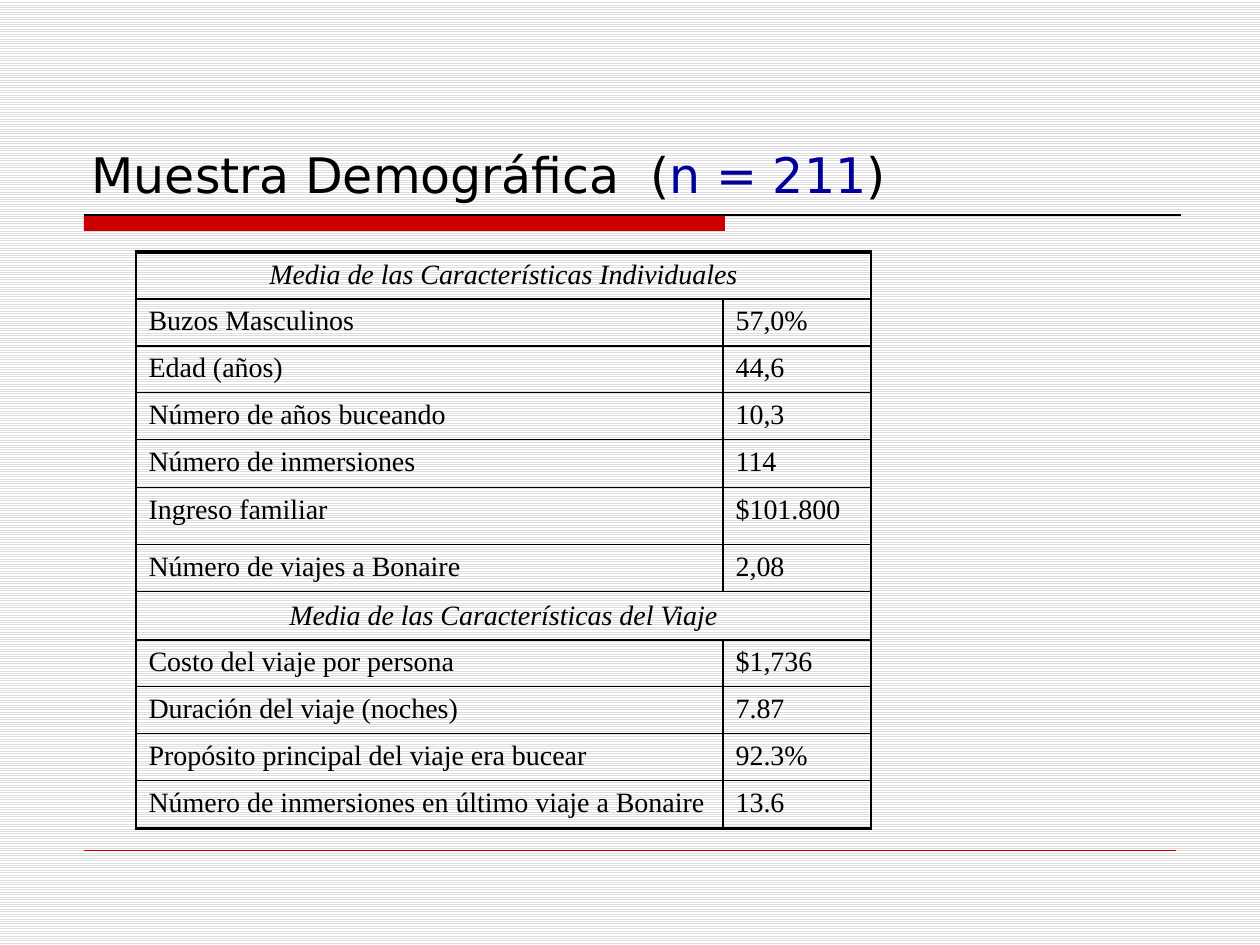
import pptx
import pptx.util
import pptx.dml.color
import pptx.enum.dml
import pptx.enum.shapes
import pptx.enum.text
import pptx.oxml
import pptx.oxml.ns

RGB = pptx.dml.color.RGBColor
BLACK = RGB(0x00, 0x00, 0x00)
BLUE = RGB(0x00, 0x00, 0x99)
RED = RGB(0xCC, 0x00, 0x00)
GREY = RGB(0xDD, 0xDD, 0xDD)
WHITE = RGB(0xFF, 0xFF, 0xFF)
TITLE_FONT, TABLE_FONT = "DejaVu Sans", "Times New Roman"

TITLE = [("Muestra Demográfica  (", BLACK), ("n = 211", BLUE), (")", BLACK)]
# Rows with a single entry are section headings that span the table.
ROWS = [
    ("Media de las Características Individuales",),
    ("Buzos Masculinos", "57,0%"),
    ("Edad (años)", "44,6"),
    ("Número de años buceando", "10,3"),
    ("Número de inmersiones", "114"),
    ("Ingreso familiar", "$101.800"),
    ("Número de viajes a Bonaire", "2,08"),
    ("Media de las Características del Viaje",),
    ("Costo del viaje por persona", "$1,736"),
    ("Duración del viaje (noches)", "7.87"),
    ("Propósito principal del viaje era bucear", "92.3%"),
    ("Número de inmersiones en último viaje a Bonaire", "13.6"),
]
ROW_HEIGHTS = [47, 47, 47, 47, 48, 57, 47, 48, 47, 47, 47, 48]
COL_WIDTHS = [587, 148]
TABLE_LEFT, TABLE_TOP = 136, 252
HANGING = 64
THIN, HEADING_RULE, OUTER_RULE = 0.75, 1, 2


def px(n):
    return pptx.util.Emu(round(n * 914400 / 126))


def add_run(p, text, **font):
    r = p.add_run()
    r.text = text
    color = font.pop("color")
    for name, value in font.items():
        setattr(r.font, name, value)
    r.font.color.rgb = color


def add_rule(s, x1, x2, y, color, width):
    line = s.shapes.add_connector(
        pptx.enum.shapes.MSO_CONNECTOR.STRAIGHT, px(x1), px(y), px(x2), px(y))
    line.line.color.rgb = color
    line.line.width = pptx.util.Pt(width)
    pptx.oxml.ns.qn("a:effectLst")
    line._element.spPr.append(pptx.oxml.parse_xml(
        f'<a:effectLst {pptx.oxml.ns.nsdecls("a")}/>'))


def set_borders(cell, top, bottom):
    tc_pr = cell._tc.get_or_add_tcPr()
    for side, width in {"L": THIN, "R": THIN, "T": top, "B": bottom}.items():
        tc_pr.append(pptx.oxml.parse_xml(
            f'<a:ln{side} {pptx.oxml.ns.nsdecls("a")} w="{pptx.util.Pt(width)}">'
            f'<a:solidFill><a:srgbClr val="{BLACK}"/></a:solidFill></a:ln{side}>'))


def rule_width(edge):
    """Width of the horizontal rule above row number edge."""
    if edge in (0, len(ROWS)):
        return OUTER_RULE
    return HEADING_RULE if len(ROWS[edge - 1]) == 1 else THIN


def add_title(s):
    sp = s.shapes.title
    sp.left, sp.top, sp.width, sp.height = map(px, (79, 42, 1103, 168))
    tf = sp.text_frame
    tf.word_wrap = True
    tf.vertical_anchor = pptx.enum.text.MSO_ANCHOR.BOTTOM
    p = tf.paragraphs[0]
    p.alignment = pptx.enum.text.PP_ALIGN.LEFT
    for text, color in TITLE:
        add_run(p, text, color=color, name=TITLE_FONT, size=pptx.util.Pt(28))


def add_table(s):
    table = s.shapes.add_table(
        len(ROWS), len(COL_WIDTHS), px(TABLE_LEFT), px(TABLE_TOP),
        px(sum(COL_WIDTHS)), px(sum(ROW_HEIGHTS))).table
    table.first_row = table.horz_banding = False
    for column, width in zip(table.columns, COL_WIDTHS):
        column.width = px(width)
    for i, (texts, height) in enumerate(zip(ROWS, ROW_HEIGHTS)):
        table.rows[i].height = px(height)
        heading = len(texts) == 1
        for cell in table.rows[i].cells:
            set_borders(cell, rule_width(i), rule_width(i + 1))
            cell.fill.background()
        if heading:
            table.cell(i, 0).merge(table.cell(i, 1))
        for j, text in enumerate(texts):
            cell = table.cell(i, j)
            p = cell.text_frame.paragraphs[0]
            p_pr = p._p.get_or_add_pPr()
            p_pr.set("marL", str(px(HANGING)))
            p_pr.set("indent", str(-px(HANGING)))
            if heading:
                cell.vertical_anchor = pptx.enum.text.MSO_ANCHOR.MIDDLE
                p.alignment = pptx.enum.text.PP_ALIGN.CENTER
            add_run(p, text, color=BLACK, name=TABLE_FONT,
                    size=pptx.util.Pt(16), italic=heading)


def main():
    prs = pptx.Presentation()
    prs.slide_width, prs.slide_height = px(1260), px(945)
    s = prs.slides.add_slide(prs.slide_layouts[5])

    fill = s.background.fill
    fill.patterned()
    fill.pattern = pptx.enum.dml.MSO_PATTERN.LIGHT_HORIZONTAL
    fill.fore_color.rgb, fill.back_color.rgb = GREY, WHITE

    bar = s.shapes.add_shape(
        pptx.enum.shapes.MSO_SHAPE.RECTANGLE, *map(px, (84, 215, 641, 16)))
    bar.shadow.inherit = False
    bar.fill.solid()
    bar.fill.fore_color.rgb = RED
    bar.line.fill.background()
    add_rule(s, 84, 1181, 215, BLACK, 0.75)
    add_rule(s, 84, 1176, 850, RED, 0.25)

    add_title(s)
    add_table(s)
    prs.save("out.pptx")


if __name__ == "__main__":
    main()
